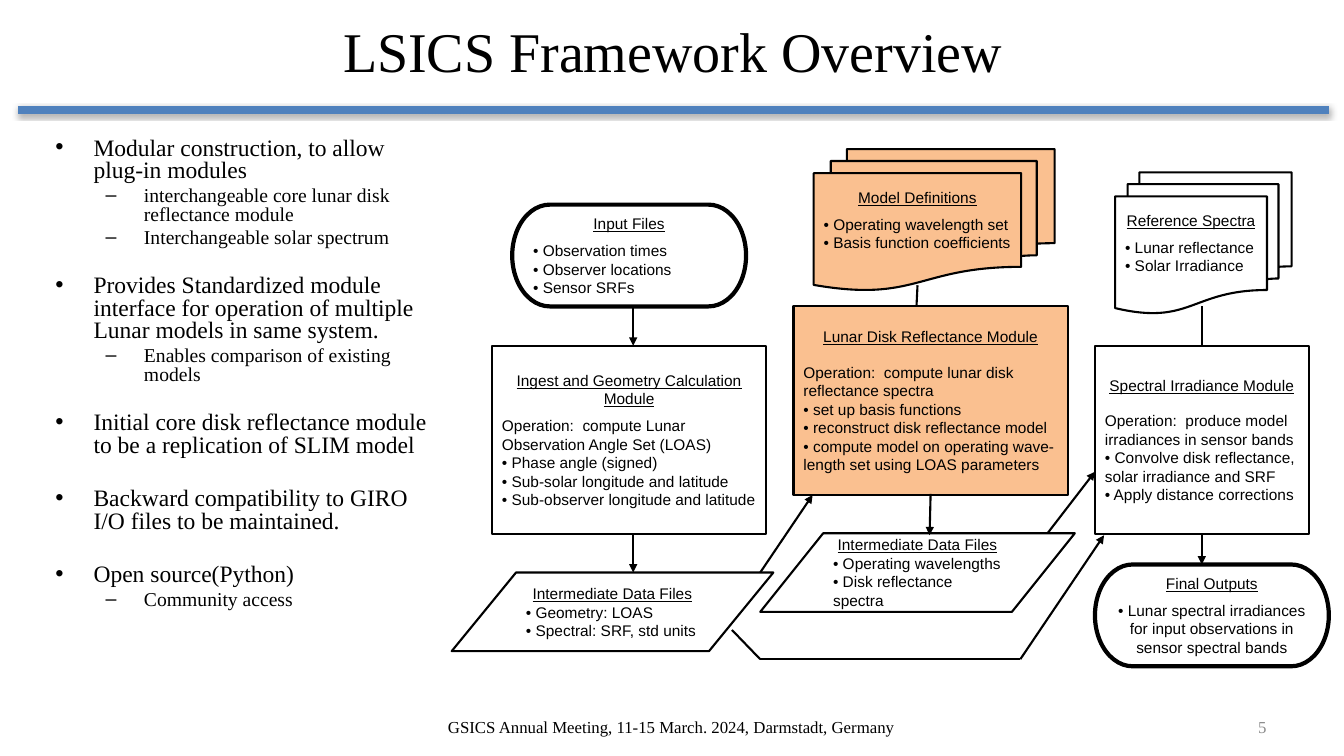
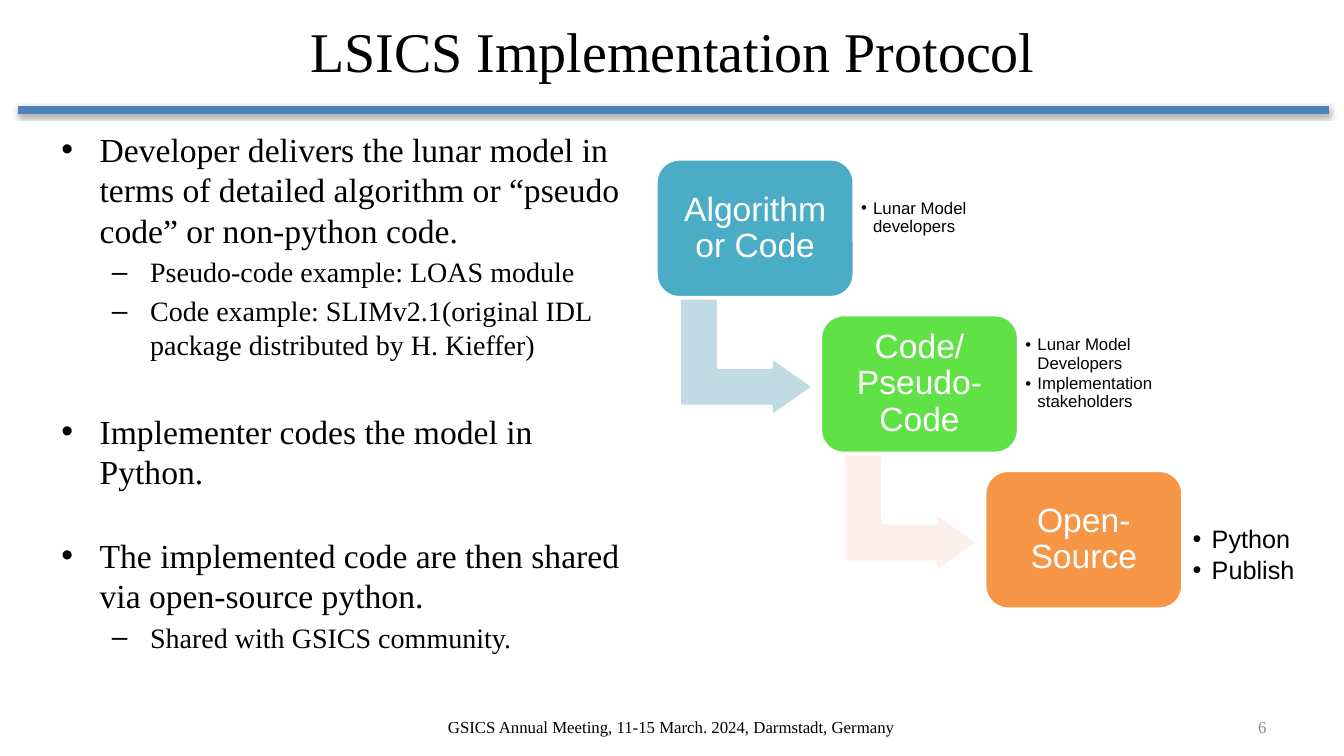
from dataclasses import dataclass
from itertools import pairwise

from lxml import etree
from pptx import Presentation
from pptx.dml.color import RGBColor
from pptx.enum import shapes, text
from pptx.oxml.ns import qn
from pptx.util import Inches, Pt

SHAPE = shapes.MSO_SHAPE
ALIGN = text.PP_ALIGN
ANCHOR = text.MSO_ANCHOR


@dataclass(frozen=True)
class Theme:
    serif: str = "Times New Roman"
    sans: str = "Arial"
    ink: str = "000000"
    paper: str = "FFFFFF"
    rule: str = "4F81BD"
    number: str = "8C8C8C"
    core: str = "FAC090"
    title_size: float = 40
    footer_size: float = 12
    flow_size: float = 11
    step_size: float = 24
    line: float = 1.5
    heavy_line: float = 3
    step_line: float = 2


THEME = Theme()
FOOTER = "GSICS Annual Meeting, 11-15 March. 2024, Darmstadt, Germany"
INSETS = (0.1, 0.05, 0.1, 0.05)


def rgb(value):
    return RGBColor.from_string(value)


def set_frame(shape, insets=INSETS, anchor=ANCHOR.MIDDLE):
    frame = shape.text_frame
    frame.word_wrap = True
    frame.vertical_anchor = anchor
    (frame.margin_left, frame.margin_top,
     frame.margin_right, frame.margin_bottom) = map(Inches, insets)
    return frame


def add_paragraphs(frame, lines):
    """Fill the frame with one paragraph per line and return the paragraphs."""
    frame.text = "\n".join(lines)
    return frame.paragraphs


def style(paragraph, size, font, color=THEME.ink, align=ALIGN.LEFT):
    paragraph.alignment = align
    for run in paragraph.runs:
        run.font.size = Pt(size)
        run.font.name = font
        run.font.color.rgb = rgb(color)


def add_bullet(paragraph, mark, margin, hanging):
    properties = paragraph._p.get_or_add_pPr()
    properties.set("marL", str(Inches(margin)))
    properties.set("indent", str(-Inches(hanging)))
    etree.SubElement(properties, qn("a:buFont")).set("typeface", THEME.sans)
    etree.SubElement(properties, qn("a:buChar")).set("char", mark)


def add_text(slide, box, insets=INSETS, anchor=ANCHOR.MIDDLE):
    shape = slide.shapes.add_textbox(*map(Inches, box))
    return set_frame(shape, insets, anchor)


def add_label(slide, box, label, size, color=THEME.ink, align=ALIGN.CENTER):
    paragraph = add_paragraphs(add_text(slide, box), [label])[0]
    style(paragraph, size, THEME.serif, color, align)


def add_box(slide, kind, box, fill, line_color, line_width):
    shape = slide.shapes.add_shape(kind, *map(Inches, box))
    shape.shadow.inherit = False
    if fill:
        shape.fill.solid()
        shape.fill.fore_color.rgb = rgb(fill)
    else:
        shape.fill.background()
    shape.line.color.rgb = rgb(line_color)
    shape.line.width = Pt(line_width)
    return shape


def add_line(slide, start, end, color, width):
    """Draw a straight line; return it with its empty effect list."""
    line = slide.shapes.add_connector(
        shapes.MSO_CONNECTOR.STRAIGHT, *map(Inches, (*start, *end)))
    line.line.color.rgb = rgb(color)
    line.line.width = Pt(width)
    effects = etree.SubElement(line._element.spPr, qn("a:effectLst"))
    return line, effects


def add_route(slide, points, arrow):
    """Join the points with lines, the last one with an arrowhead if asked."""
    for start, end in pairwise(points):
        line, _ = add_line(slide, start, end, THEME.ink, THEME.line)
    if arrow:
        head = etree.SubElement(line.line._get_or_add_ln(), qn("a:tailEnd"))
        head.set("type", "triangle")


def add_header_rule(slide):
    _, effects = add_line(slide, (0.18, 1.09), (13.18, 1.09), THEME.rule, 6)
    shadow = etree.SubElement(effects, qn("a:outerShdw"), blurRad=str(Pt(3.1)),
                              dist=str(Pt(1.6)), dir="5400000", rotWithShape="0")
    color = etree.SubElement(shadow, qn("a:srgbClr"), val=THEME.ink)
    etree.SubElement(color, qn("a:alpha"), val="30000")


def new_slide(presentation, title, number):
    slide = presentation.slides.add_slide(presentation.slide_layouts[6])
    add_header_rule(slide)
    add_label(slide, (1.67, 0.11, 10, 0.77), title, THEME.title_size)
    add_label(slide, (2.66, 7, 8, 0.43), FOOTER, THEME.footer_size)
    add_label(slide, (10.66, 7, 2, 0.43), str(number), THEME.footer_size,
              THEME.number, ALIGN.RIGHT)
    return slide


def add_outline(slide, box, items, sizes, spacing, before, after):
    """Place two-level bullets; items are (level, gap above in points, text)."""
    frame = add_text(slide, box, anchor=ANCHOR.TOP)
    paragraphs = add_paragraphs(frame, [item[2] for item in items])
    for index, (paragraph, (level, gap, _)) in enumerate(zip(paragraphs, items)):
        add_bullet(paragraph, "•–"[level], 0.5 + 0.5 * level, 0.38)
        paragraph.level = level
        paragraph.line_spacing = spacing
        paragraph.space_before = Pt(before + gap if index else 0)
        paragraph.space_after = Pt(after)
        style(paragraph, sizes[level], THEME.serif)


def add_flow_node(slide, kind, box, heading, lines, gap=0, fill=None,
                  align=ALIGN.LEFT):
    """Draw a flowchart shape with an underlined heading over its lines."""
    heavy = kind == SHAPE.FLOWCHART_TERMINATOR
    width = THEME.heavy_line if heavy else THEME.line
    shape = add_box(slide, kind, box, fill, THEME.ink, width)
    stacked = kind == SHAPE.FLOWCHART_MULTIDOCUMENT
    frame = set_frame(shape, (0.1, 0.05, 0.1, 0.23) if stacked else INSETS)
    first, *rest = add_paragraphs(frame, [heading, *lines])
    style(first, THEME.flow_size, THEME.sans, align=ALIGN.CENTER)
    first.runs[0].font.underline = True
    first.space_after = Pt(gap)
    for paragraph in rest:
        style(paragraph, THEME.flow_size, THEME.sans, align=align)


def add_framework_flow(slide, left, top):
    process, data = SHAPE.FLOWCHART_PROCESS, SHAPE.FLOWCHART_DATA
    documents, terminator = SHAPE.FLOWCHART_MULTIDOCUMENT, SHAPE.FLOWCHART_TERMINATOR
    nodes = [
        (process, (0.4, 1.95, 2.72, 1.87), "Ingest and Geometry Calculation Module",
         ["Operation:  compute Lunar Observation Angle Set (LOAS)",
          "• Phase angle (signed)", "• Sub-solar longitude and latitude",
          "• Sub-observer longitude and latitude"], 6),
        (data, (0, 4.2, 3.19, 0.78), "Intermediate Data Files",
         ["• Geometry: LOAS", "• Spectral: SRF, std units"]),
        (process, (3.39, 1.56, 2.72, 1.87), "Lunar Disk Reflectance Module",
         ["Operation:  compute lunar disk reflectance spectra",
          "• set up basis functions", "• reconstruct disk reflectance model",
          "• compute model on operating wave- length set using LOAS parameters"],
         12, THEME.core),
        (process, (6.38, 1.95, 2.12, 1.87), "Spectral Irradiance Module",
         ["Operation:  produce model irradiances in sensor bands",
          "• Convolve disk reflectance, solar irradiance and SRF",
          "• Apply distance corrections"], 12),
        (documents, (3.59, 0, 2.39, 1.4), "Model Definitions",
         ["• Operating wavelength set", "• Basis function coefficients"],
         6, THEME.core),
        (documents, (6.58, 0.23, 1.75, 1.4), "Reference Spectra",
         ["• Lunar reflectance", "• Solar Irradiance"], 6),
        (data, (3.06, 3.81, 3.12, 0.78), "Intermediate Data Files",
         ["• Operating wavelengths", "• Disk reflectance spectra"]),
        (terminator, (0.6, 0.55, 2.32, 1.01), "Input Files",
         ["• Observation times", "• Observer locations", "• Sensor SRFs"], 6),
        (terminator, (6.38, 4.12, 2.32, 1.01), "Final Outputs",
         ["• Lunar spectral irradiances for input observations in sensor "
          "spectral bands"], 6, None, ALIGN.CENTER),
    ]
    for kind, (x, y, width, height), *content in nodes:
        add_flow_node(slide, kind, (left + x, top + y, width, height), *content)

    arrows = [
        [(1.8, 1.56), (1.8, 1.95)],
        [(1.8, 3.81), (1.8, 4.2)],
        [(3.06, 4.2), (3.58, 3.43)],
        [(4.75, 3.42), (4.74, 3.83)],
        [(2.78, 4.77), (3.06, 5.06), (5.64, 5.06), (6.47, 3.83)],
        [(5.91, 3.81), (6.38, 3.2)],
        [(7.44, 3.81), (7.44, 4.12)],
    ]
    plain = [[(4.62, 1.35), (4.61, 1.56)], [(7.44, 1.95), (7.44, 1.56)]]
    for route in arrows + plain:
        points = [(left + x, top + y) for x, y in route]
        add_route(slide, points, arrow=route in arrows)


def add_step(slide, left, top, label, fill):
    box = add_box(slide, SHAPE.ROUNDED_RECTANGLE, (left, top, 1.96, 1.37),
                  fill, THEME.paper, THEME.step_line)
    box.adjustments[0] = 0.167
    paragraph = add_paragraphs(set_frame(box, (0.1,) * 4), [label])[0]
    paragraph.line_spacing = 0.9
    style(paragraph, THEME.step_size, THEME.sans, THEME.paper, ALIGN.CENTER)


def add_step_arrow(slide, left, top, fill):
    arrow = add_box(slide, SHAPE.BENT_UP_ARROW, (left, top, 1.17, 1.33),
                    fill, THEME.paper, THEME.step_line)
    arrow.rotation = 90
    for index, value in enumerate((0.328, 0.25, 0.358)):
        arrow.adjustments[index] = value


def add_step_notes(slide, left, top, lines, size, hanging, insets):
    frame = add_text(slide, (left, top, 1.43, 1.11), insets)
    for paragraph in add_paragraphs(frame, lines):
        add_bullet(paragraph, "•", hanging, hanging)
        paragraph.line_spacing = 0.9
        paragraph.space_after = Pt(0.15 * size)
        style(paragraph, size, THEME.sans)


def add_staircase(slide, left, top):
    """Draw the steps down to the right, with an arrow between neighbours."""
    small = (12, 0.12, (0.07, 0.07, 0.07, 0.27))
    large = (18, 0.19, (0.1, 0.41, 0.1, 0.1))
    steps = [
        ("Algorithm or Code", "4BACC6", "C1DBE5", ["Lunar Model developers"], small),
        ("Code/ Pseudo-Code", "60E146", "FDEFE9",
         ["Lunar Model Developers", "Implementation stakeholders"], small),
        ("Open-Source", "F79646", None, ["Python", "Publish"], large),
    ]
    for index, (label, fill, arrow_fill, notes, note_style) in enumerate(steps):
        x, y = left + 1.63 * index, top + 1.545 * index
        if arrow_fill:
            add_step_arrow(slide, x + 0.31, y + 1.3, arrow_fill)
        add_step(slide, x, y, label, fill)
        add_step_notes(slide, x + 1.96, y + 0.13, notes, *note_style)


def framework_slide(presentation):
    slide = new_slide(presentation, "LSICS Framework Overview", 5)
    add_outline(slide, (0.33, 1.32, 4.1, 5.91), [
        (0, 0, "Modular construction, to allow plug-in modules"),
        (1, 0, "interchangeable core lunar disk reflectance module"),
        (1, 0, "Interchangeable solar spectrum"),
        (0, 16.5, "Provides Standardized module interface for operation of "
                  "multiple Lunar models in same system."),
        (1, 0, "Enables comparison of existing models"),
        (0, 16.5, "Initial core disk reflectance module to be a replication of "
                  "SLIM model"),
        (0, 19, "Backward compatibility to GIRO I/O files to be maintained."),
        (0, 19, "Open source(Python)"),
        (1, 0, "Community access"),
    ], sizes=(16.8, 14), spacing=0.8, before=0, after=3)
    add_framework_flow(slide, 4.48, 1.48)


def protocol_slide(presentation):
    slide = new_slide(presentation, "LSICS Implementation Protocol", 6)
    add_outline(slide, (0.39, 1.23, 5.89, 5.52), [
        (0, 0, "Developer delivers the lunar model in terms of detailed algorithm "
               "or “pseudo code” or non-python code."),
        (1, 0, "Pseudo-code example: LOAS module"),
        (1, 0, "Code example: SLIMv2.1(original IDL package distributed by "
               "H. Kieffer)"),
        (0, 32, "Implementer codes the model in Python."),
        (0, 27.5, "The implemented code are then shared via open-source python."),
        (1, 0, "Shared with GSICS community."),
    ], sizes=(24, 20), spacing=1.0, before=3.6, after=0)
    add_staircase(slide, 6.51, 1.58)


def main():
    presentation = Presentation()
    presentation.slide_width = Inches(13.33)
    presentation.slide_height = Inches(7.5)
    framework_slide(presentation)
    protocol_slide(presentation)
    presentation.save("out.pptx")


if __name__ == "__main__":
    main()
